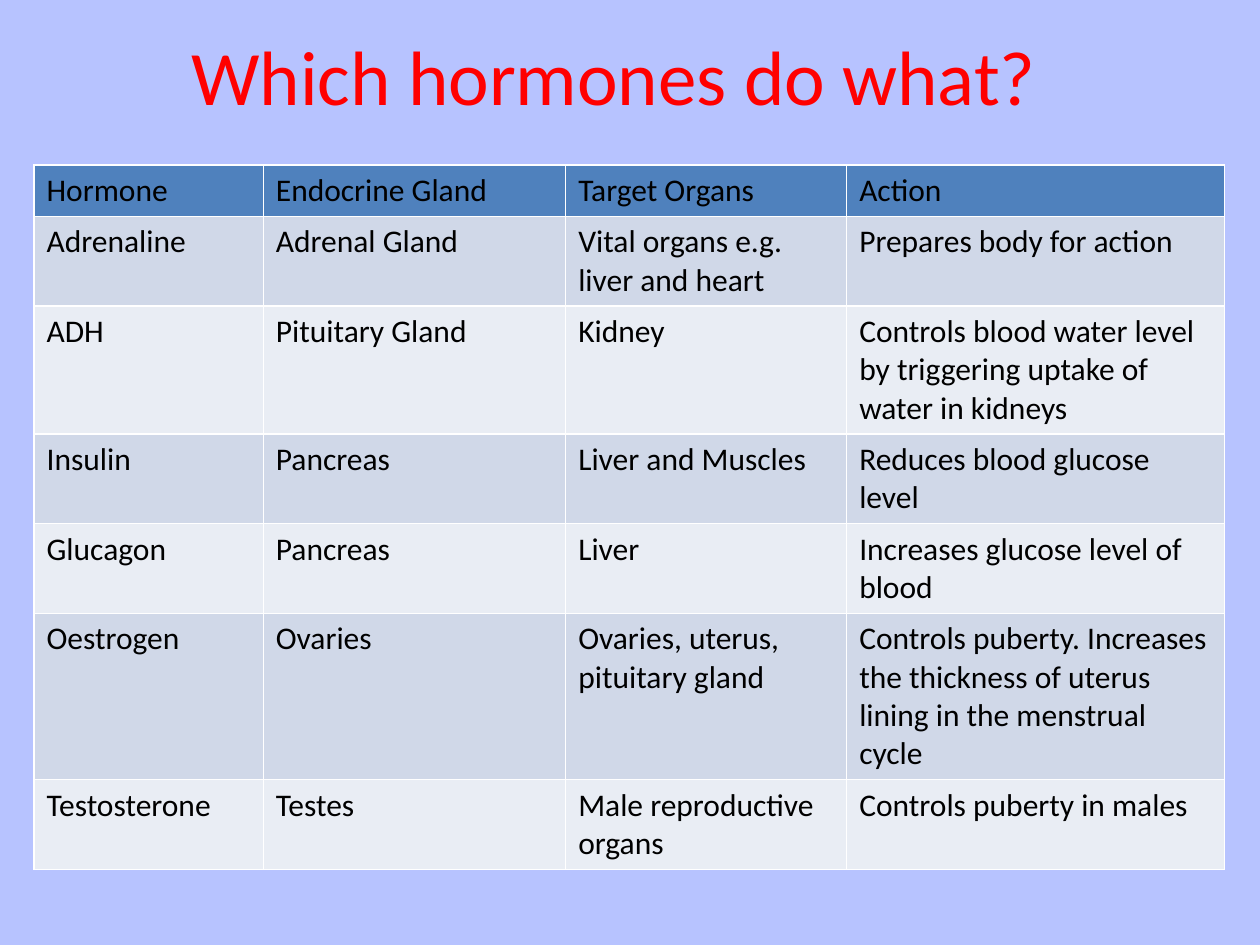
"""Build a slide with a table of hormones, their glands, targets and actions."""
from lxml import etree
from pptx import Presentation
from pptx.dml.color import RGBColor
from pptx.enum.text import MSO_ANCHOR, PP_ALIGN
from pptx.oxml.ns import qn
from pptx.util import Inches, Pt

CENTER, LEFT = PP_ALIGN.CENTER, PP_ALIGN.LEFT
TOP = MSO_ANCHOR.TOP
HEADER_FILL = "4F81BD"
BAND_FILLS = ["E9EDF4", "D0D8E8"]
COLUMN_WIDTHS = [1.82, 2.4, 2.23, 3]
ROW_HEIGHTS = [0.41, 0.7, 1, 0.7, 0.7, 1.3, 0.7]
ROWS = [
    ["Hormone", "Endocrine Gland", "Target Organs", "Action"],
    ["Adrenaline", "Adrenal Gland", "Vital organs e.g. liver and heart",
     "Prepares body for action"],
    ["ADH", "Pituitary Gland", "Kidney",
     "Controls blood water level by triggering uptake of water in kidneys"],
    ["Insulin", "Pancreas", "Liver and Muscles", "Reduces blood glucose level"],
    ["Glucagon", "Pancreas", "Liver", "Increases glucose level of blood"],
    ["Oestrogen", "Ovaries", "Ovaries, uterus, pituitary gland",
     "Controls puberty. Increases the thickness of uterus lining in the menstrual cycle"],
    ["Testosterone", "Testes", "Male reproductive organs", "Controls puberty in males"],
]


def write(frame, text, size=18, color="000000", align=LEFT):
    para = frame.paragraphs[0]
    para.alignment = align
    span = para.add_run()
    span.text = text
    span.font.name = "Calibri"
    span.font.size = Pt(size)
    span.font.bold = False
    span.font.color.rgb = RGBColor.from_string(color)


def add_borders(cell, color="FFFFFF", width=1):
    properties = cell._tc.get_or_add_tcPr()
    for side in ("a:lnL", "a:lnR", "a:lnT", "a:lnB"):
        line = etree.SubElement(properties, qn(side), w=str(Pt(width)))
        fill = etree.SubElement(line, qn("a:solidFill"))
        etree.SubElement(fill, qn("a:srgbClr"), val=color)


deck = Presentation()
deck.slide_width, deck.slide_height = Inches(10), Inches(7.5)
page = deck.slides.add_slide(deck.slide_layouts[5])
page.background.fill.solid()
page.background.fill.fore_color.rgb = RGBColor.from_string("B7C3FF")

title = page.shapes.title
title.left, title.top = Inches(0.27), Inches(0.18)
title.width, title.height = Inches(9.21), Inches(0.84)
title.text_frame.vertical_anchor = TOP
title.text_frame.word_wrap = True
write(title.text_frame, "Which hormones do what?", size=44, color="FF0000", align=CENTER)

table = page.shapes.add_table(
    len(ROWS), len(COLUMN_WIDTHS), Inches(0.27), Inches(1.31),
    Inches(sum(COLUMN_WIDTHS)), Inches(sum(ROW_HEIGHTS))).table
for column, width in zip(table.columns, COLUMN_WIDTHS):
    column.width = Inches(width)
for row_index, (row, height, texts) in enumerate(zip(table.rows, ROW_HEIGHTS, ROWS)):
    row.height = Inches(height)
    fill_color = BAND_FILLS[row_index % 2] if row_index else HEADER_FILL
    for cell, text in zip(row.cells, texts):
        add_borders(cell)
        cell.fill.solid()
        cell.fill.fore_color.rgb = RGBColor.from_string(fill_color)
        write(cell.text_frame, text)

deck.save("out.pptx")
